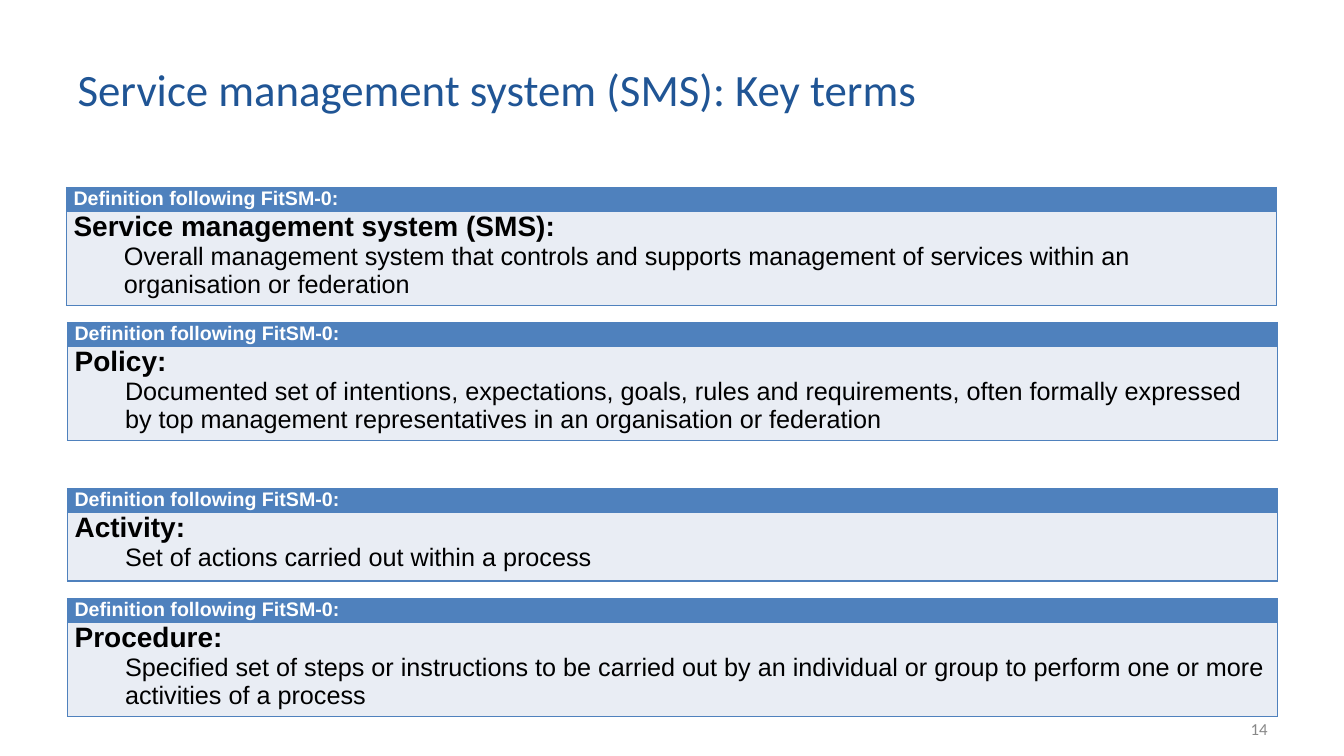
from lxml import etree
from pptx import Presentation
from pptx.dml.color import RGBColor
from pptx.enum.text import MSO_ANCHOR, PP_ALIGN
from pptx.oxml.ns import qn
from pptx.util import Inches, Pt

TITLE_BLUE = RGBColor(0x20, 0x55, 0x95)
HEADER_BLUE = RGBColor(0x4F, 0x81, 0xBD)
PALE_BLUE = RGBColor(0xE9, 0xED, 0xF4)
WHITE = RGBColor(0xFF, 0xFF, 0xFF)
BLACK = RGBColor(0x00, 0x00, 0x00)
GREY = RGBColor(0x88, 0x88, 0x88)

# left, top, header height, body height, term, definition
DEFINITIONS = [
    (0.66, 1.86, 0.22, 0.78, "Service management system (SMS):",
     "Overall management system that controls and supports management of "
     "services within an organisation or federation"),
    (0.67, 3.2, 0.22, 0.78, "Policy:",
     "Documented set of intentions, expectations, goals, rules and requirements, "
     "often formally expressed by top management representatives in an "
     "organisation or federation"),
    (0.67, 4.85, 0.2, 0.68, "Activity:",
     "Set of actions carried out within a process"),
    (0.67, 5.94, 0.22, 0.78, "Procedure:",
     "Specified set of steps or instructions to be carried out by an individual "
     "or group to perform one or more activities of a process"),
]


def style_runs(paragraph, size, color, name="Arial", bold=False):
    for run in paragraph.runs:
        run.font.size = Pt(size)
        run.font.name = name
        run.font.bold = bold
        run.font.color.rgb = color


def style_cell(cell, fill_color):
    cell.margin_left = cell.margin_right = Inches(0.07)
    cell.margin_top = cell.margin_bottom = 0
    properties = cell._tc.get_or_add_tcPr()
    for side in ("lnL", "lnR", "lnT", "lnB"):
        border = etree.SubElement(properties, qn(f"a:{side}"), w=str(Pt(1)))
        solid = etree.SubElement(border, qn("a:solidFill"))
        etree.SubElement(solid, qn("a:srgbClr"), val=str(HEADER_BLUE))
    cell.fill.solid()
    cell.fill.fore_color.rgb = fill_color


prs = Presentation()
prs.slide_width, prs.slide_height = Inches(13.33), Inches(7.5)
slide = prs.slides.add_slide(prs.slide_layouts[5])

# Title
title = slide.shapes.title
title.left, title.top = Inches(0.67), Inches(0.3)
title.width, title.height = Inches(9.91), Inches(1.15)
title.text_frame.text = "Service management system (SMS): Key terms"
title.text_frame.vertical_anchor = MSO_ANCHOR.MIDDLE
heading = title.text_frame.paragraphs[0]
heading.alignment = PP_ALIGN.LEFT
style_runs(heading, 32, TITLE_BLUE, "Calibri")

# Slide number
number_box = slide.shapes.add_textbox(Inches(9.56), Inches(7.03), Inches(3.11), Inches(0.4))
number_box.text_frame.word_wrap = True
number_box.text_frame.vertical_anchor = MSO_ANCHOR.MIDDLE
number_box.text_frame.text = "14"
number = number_box.text_frame.paragraphs[0]
number.alignment = PP_ALIGN.RIGHT
style_runs(number, 12, GREY, "Calibri")

# Definition tables
for left, top, header_height, body_height, term, definition in DEFINITIONS:
    table = slide.shapes.add_table(2, 1, Inches(left), Inches(top), Inches(12),
                                   Inches(header_height + body_height)).table
    table.rows[0].height = Inches(header_height)
    table.rows[1].height = Inches(body_height)

    header, body = table.cell(0, 0), table.cell(1, 0)
    style_cell(header, HEADER_BLUE)
    header.text_frame.text = "Definition following FitSM-0:"
    style_runs(header.text_frame.paragraphs[0], 14, WHITE, bold=True)

    style_cell(body, PALE_BLUE)
    body.text_frame.text = term
    style_runs(body.text_frame.paragraphs[0], 20, BLACK, bold=True)
    meaning = body.text_frame.add_paragraph()
    meaning.text = definition
    meaning.level = 1
    indent = meaning._p.get_or_add_pPr()
    indent.set("marL", str(Inches(0.5)))
    indent.set("indent", "0")
    style_runs(meaning, 18, BLACK)

prs.save("out.pptx")
